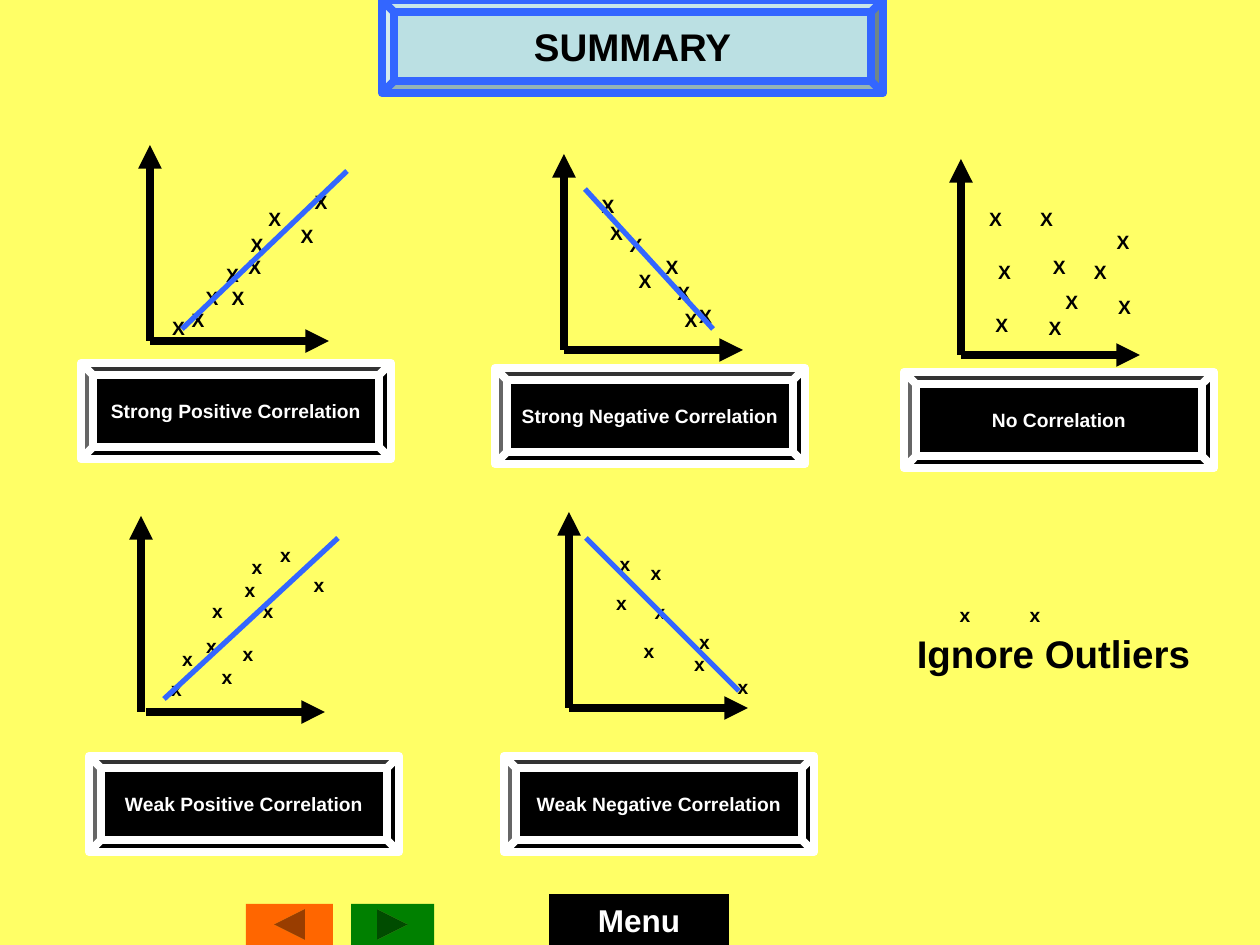
from lxml.etree import SubElement
from pptx import Presentation
from pptx.dml.color import RGBColor
from pptx.enum.shapes import MSO_CONNECTOR, MSO_SHAPE
from pptx.enum.text import MSO_ANCHOR, MSO_AUTO_SIZE, PP_ALIGN
from pptx.oxml.ns import qn
from pptx.util import Emu, Pt

PX = 914400 / 126
YELLOW = RGBColor(0xFF, 0xFF, 0x66)
PALE_BLUE = RGBColor(0xBB, 0xE0, 0xE3)
BLUE = RGBColor(0x33, 0x66, 0xFF)
BLACK = RGBColor(0, 0, 0)
WHITE = RGBColor(0xFF, 0xFF, 0xFF)
GREEN = RGBColor(0, 0x80, 0)
ORANGE = RGBColor(0xFF, 0x66, 0)

AXIS_W, AXIS_H = 179, 196
LABEL_W, LABEL_H = 310, 96
MARK_H = 33

# Each plot: axes left and top, gap before the x axis, label text and offset,
# mark letter, marks (x, y, width) and trend line, all relative to the axes box
PLOTS = [
    dict(left=150, top=145, gap=0, label="Strong Positive Correlation", label_at=(-69, 218),
         mark="X", trend=(32, 184, 197, 26),
         marks=[(26, 158, 44), (48, 113, 69), (118, 74, 78), (140, 40, 62), (74, 83, 66),
                (40, 136, 44), (66, 105, 78), (0, 166, 57), (57, 136, 62), (92, 57, 66)]),
    dict(left=564, top=154, gap=0, label="Strong Negative Correlation", label_at=(-69, 214),
         mark="X", trend=(149, 175, 21, 35),
         marks=[(101, 149, 52), (87, 122, 66), (35, 110, 92), (39, 74, 66),
                (14, 35, 60), (62, 96, 92), (18, 62, 69), (126, 145, 21)]),
    dict(left=961, top=159, gap=0, label="No Correlation", label_at=(-57, 213),
         mark="X", trend=None,
         marks=[(44, 43, 83), (78, 126, 66), (9, 96, 69), (140, 66, 44), (48, 91, 101),
                (122, 131, 83), (4, 149, 74), (-9, 43, 87), (57, 152, 74), (113, 96, 53)]),
    dict(left=141, top=516, gap=5, label="Weak Positive Correlation", label_at=(-52, 240),
         mark="x", trend=(23, 183, 197, 22),
         marks=[(18, 126, 57), (97, 78, 60), (110, 22, 69), (26, 78, 101), (145, 52, 66),
                (74, 121, 66), (-8, 156, 87), (79, 57, 60), (53, 113, 35), (79, 34, 74),
                (49, 144, 74)]),
    dict(left=569, top=512, gap=0, label="Weak Negative Correlation", label_at=(-65, 244),
         mark="x", trend=(170, 179, 17, 26),
         marks=[(96, 135, 69), (25, 35, 62), (52, 83, 78), (100, 113, 71),
                (9, 74, 87), (48, 44, 78), (34, 122, 92), (135, 158, 78)]),
]


def px(*values):
    return [Emu(round(v * PX)) for v in values]


def set_text(sp, text, size, color, wrap):
    tf = sp.text_frame
    margin_x, margin_y = px(9, 5)
    frame = dict(margin_left=margin_x, margin_right=margin_x, margin_top=margin_y,
                 margin_bottom=margin_y, word_wrap=wrap)
    for name, value in frame.items():
        setattr(tf, name, value)
    p = tf.paragraphs[0]
    p.alignment = PP_ALIGN.CENTER
    r = p.add_run()
    r.text = text
    for name, value in dict(name="Arial", size=Pt(size), bold=True).items():
        setattr(r.font, name, value)
    r.font.color.rgb = color


def add_text(s, box, text, size):
    sp = s.shapes.add_textbox(*px(*box))
    set_text(sp, text, size, BLACK, True)
    sp.text_frame.auto_size = MSO_AUTO_SIZE.SHAPE_TO_FIT_TEXT


def add_box(s, kind, box, fill, line=None, text=None, size=None, color=None):
    sp = s.shapes.add_shape(kind, *px(*box))
    sp.shadow.inherit = False
    sp.fill.solid()
    sp.fill.fore_color.rgb = fill
    if line is None:
        sp.line.fill.background()
    else:
        sp.line.color.rgb = line
        sp.line.width = Pt(4.5)
    if text:
        set_text(sp, text, size, color, False)
        sp.text_frame.vertical_anchor = MSO_ANCHOR.MIDDLE


def add_line(s, ends, color, width, arrow=False):
    c = s.shapes.add_connector(MSO_CONNECTOR.STRAIGHT, *px(*ends))
    c.line.color.rgb = color
    c.line.width = Pt(width)
    if arrow:
        SubElement(c.line._get_or_add_ln(), qn("a:tailEnd"), type="triangle")
    SubElement(c._element.spPr, qn("a:effectLst"))


def add_plot(s, left, top, gap, label, label_at, mark, trend, marks):
    # Axes
    bottom = top + AXIS_H
    add_line(s, (left, bottom, left, top), BLACK, 4.5, True)
    add_line(s, (left + gap, bottom, left + gap + AXIS_W, bottom), BLACK, 4.5, True)
    # Marks
    for x, y, w in marks:
        add_text(s, (left + x, top + y, w, MARK_H), mark, 11)
    # Trend line
    if trend:
        x1, y1, x2, y2 = trend
        add_line(s, (left + x1, top + y1, left + x2, top + y2), BLUE, 3)
    # Label
    x, y = label_at
    add_box(s, MSO_SHAPE.BEVEL, (left + x, top + y, LABEL_W, LABEL_H),
            BLACK, WHITE, label, 11, WHITE)


def add_outliers(s, left, top):
    add_text(s, (left, top + 27, 305, 55), "Ignore Outliers", 22)
    for x in (34, 104):
        add_text(s, (left + x, top, 60, MARK_H), "x", 11)


def add_navigation(s, left, top):
    add_box(s, MSO_SHAPE.ACTION_BUTTON_FORWARD_OR_NEXT, (left + 105, top + 10, 83, 41), GREEN)
    add_box(s, MSO_SHAPE.ACTION_BUTTON_BACK_OR_PREVIOUS, (left, top + 10, 87, 41), ORANGE)
    add_box(s, MSO_SHAPE.ACTION_BUTTON_CUSTOM, (left + 303, top, 180, 51),
            BLACK, None, "Menu", 18, WHITE)


def main():
    prs = Presentation()
    prs.slide_width, prs.slide_height = px(1260, 945)
    s = prs.slides.add_slide(prs.slide_layouts[6])
    s.background.fill.solid()
    s.background.fill.fore_color.rgb = YELLOW
    # Title
    add_box(s, MSO_SHAPE.BEVEL, (382, 0, 501, 93), PALE_BLUE, BLUE, "SUMMARY", 22, BLACK)
    # Plots
    for plot in PLOTS:
        add_plot(s, **plot)
    add_outliers(s, 901, 598)
    add_navigation(s, 246, 894)
    prs.save("out.pptx")


if __name__ == "__main__":
    main()
